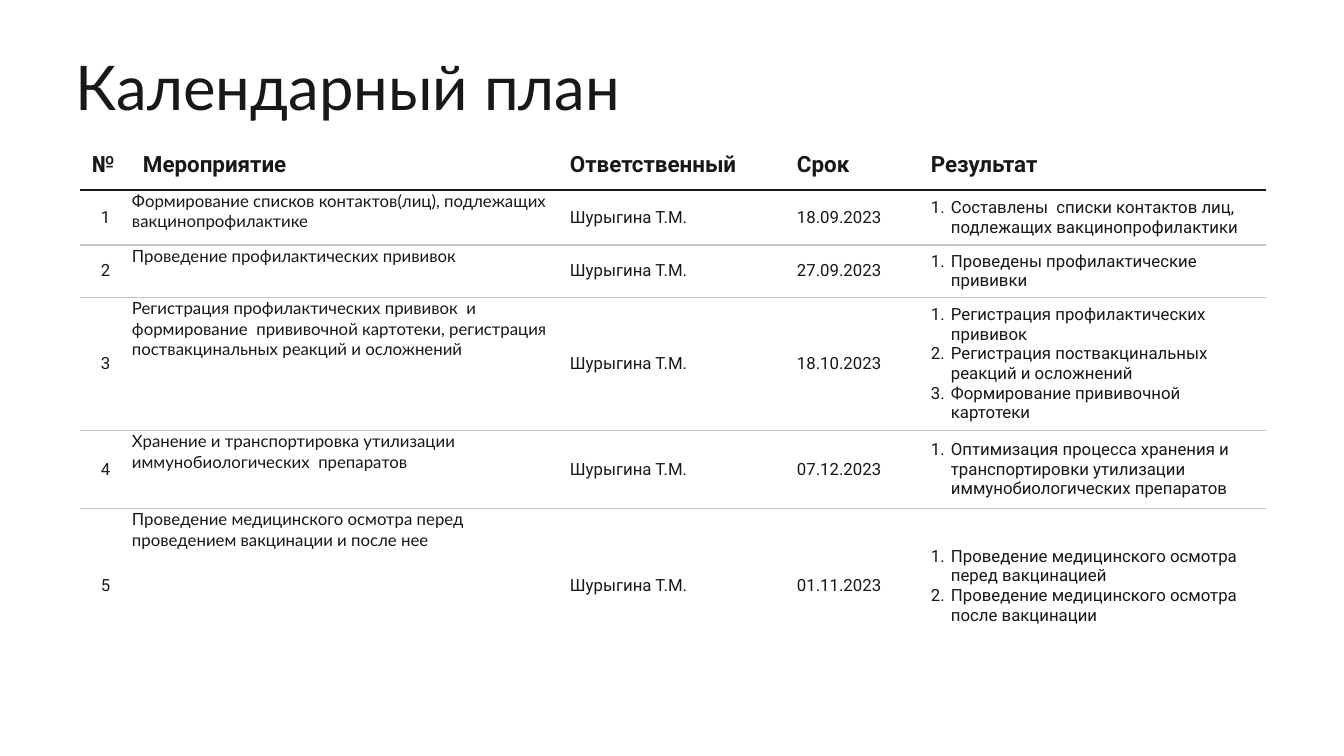
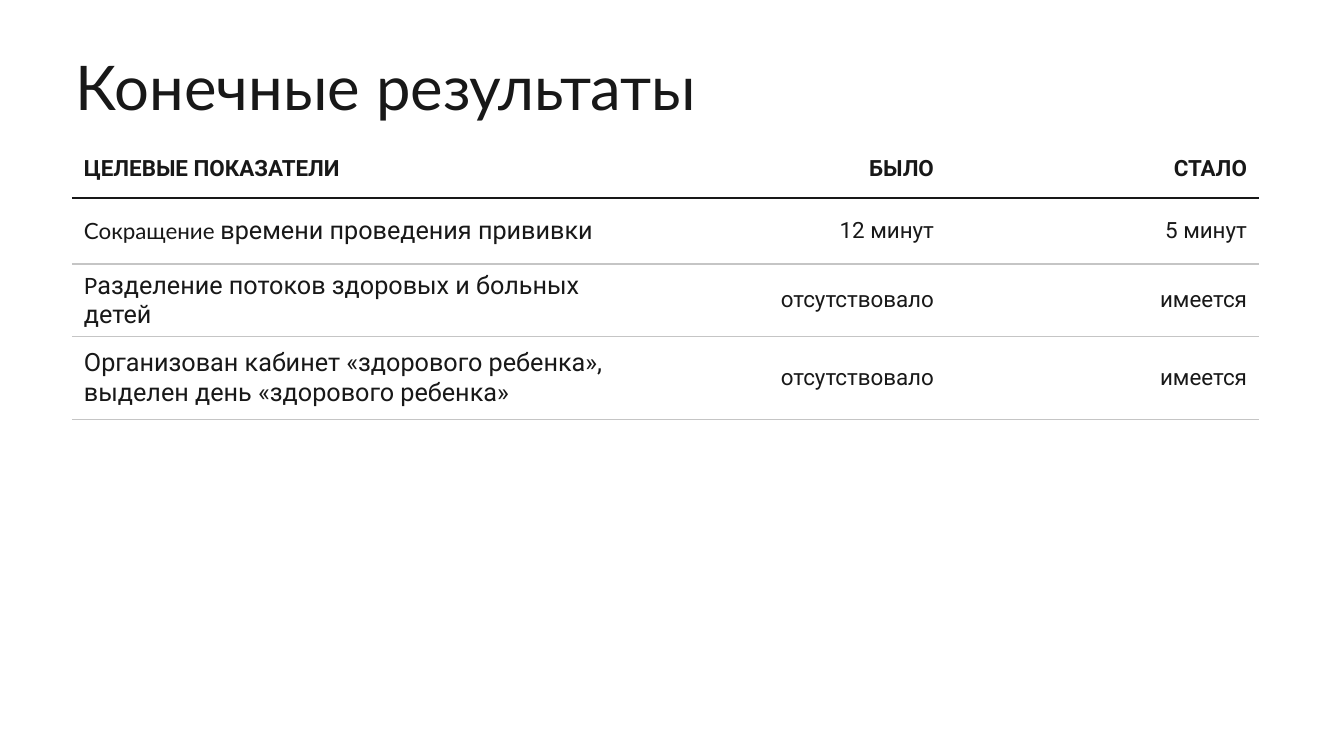
import pptx
import pptx.dml.color
import pptx.enum.text
import pptx.oxml
import pptx.oxml.ns
import pptx.util

PX = 914400 / 100.8
INK = "181818"
RULE = "C5C5C5"
HEADING_FONT = "Lato"
BODY_FONT = "Roboto"
LEFT = pptx.enum.text.PP_ALIGN.LEFT
CENTER = pptx.enum.text.PP_ALIGN.CENTER
RIGHT = pptx.enum.text.PP_ALIGN.RIGHT
TITLE_BOX = (66, 52, 1277, 80)
RESPONSIBLE = "Шурыгина Т.М."


def px(length):
    return pptx.util.Emu(round(length * PX))


def color(code):
    return pptx.dml.color.RGBColor.from_string(code)


def apply(target, values):
    for name, value in values.items():
        setattr(target, name, value)


def font(size, name=BODY_FONT, bold=False):
    return {"size": pptx.util.Pt(size), "name": name, "bold": bold}


def margins(left, top, right, bottom):
    sides = {"left": left, "top": top, "right": right, "bottom": bottom}
    return {f"margin_{side}": px(length) for side, length in sides.items()}


CELL = {**margins(12, 6, 12, 6),
        "vertical_anchor": pptx.enum.text.MSO_ANCHOR.MIDDLE}
TIGHT_CELL = {**margins(1, 1, 1, 0),
              "vertical_anchor": pptx.enum.text.MSO_ANCHOR.TOP}
HEADER_FONT = font(16, bold=True)


def column(text_font, align=LEFT, cell=CELL, header_align=LEFT, numbered=False):
    return {"font": text_font, "align": align, "cell": cell,
            "header_align": header_align, "numbered": numbered}


def add_run(paragraph, text, text_font):
    run = paragraph.add_run()
    run.text = text
    apply(run.font, text_font)
    run.font.color.rgb = color(INK)


def number_paragraph(paragraph):
    properties = paragraph._p.get_or_add_pPr()
    indent = px(20)
    properties.set("marL", str(indent))
    properties.set("indent", str(-indent))
    properties.append(pptx.oxml.parse_xml(
        f'<a:buAutoNum {pptx.oxml.ns.nsdecls("a")} type="arabicPeriod"/>'))


def draw_borders(cell, top, bottom):
    borders = {"lnL": None, "lnR": None, "lnT": top, "lnB": bottom}
    properties = cell._tc.get_or_add_tcPr()
    for tag, border in borders.items():
        code, points = border or (None, 0)
        paint = (f'<a:solidFill><a:srgbClr val="{code}"/></a:solidFill>'
                 if border else "<a:noFill/>")
        properties.append(pptx.oxml.parse_xml(
            f'<a:{tag} {pptx.oxml.ns.nsdecls("a")} w="{pptx.util.Pt(points)}">'
            f'{paint}</a:{tag}>'))


def fill_cell(cell, paragraphs, style, is_header):
    apply(cell, CELL if is_header else style["cell"])
    for index, runs in enumerate(paragraphs):
        frame = cell.text_frame
        paragraph = frame.add_paragraph() if index else frame.paragraphs[0]
        paragraph.alignment = style["header_align" if is_header else "align"]
        if style["numbered"] and not is_header:
            number_paragraph(paragraph)
        if isinstance(runs, str):
            runs = [(runs, HEADER_FONT if is_header else style["font"])]
        for text, text_font in runs:
            add_run(paragraph, text, text_font)


def draw_table(slide, left, top, widths, heights, styles, rows):
    table = slide.shapes.add_table(
        len(heights), len(widths), px(left), px(top),
        px(sum(widths)), px(sum(heights))).table
    apply(table, {"first_row": False, "horz_banding": False})
    for table_column, width in zip(table.columns, widths):
        table_column.width = px(width)
    for table_row, height in zip(table.rows, heights):
        table_row.height = px(height)
    rules = [None, (INK, 1.5)] + [(RULE, 1)] * (len(heights) - 2) + [None]
    for row_index, row in enumerate(rows):
        for column_index, content in enumerate(row):
            cell = table.cell(row_index, column_index)
            paragraphs = [content] if isinstance(content, str) else content
            fill_cell(cell, paragraphs, styles[column_index], row_index == 0)
            draw_borders(cell, rules[row_index], rules[row_index + 1])
            cell.fill.background()


def add_titled_slide(deck, title):
    slide = deck.slides.add_slide(deck.slide_layouts[6])
    frame = slide.shapes.add_textbox(*map(px, TITLE_BOX)).text_frame
    frame.word_wrap = True
    paragraph = frame.paragraphs[0]
    paragraph.line_spacing = 0.9
    add_run(paragraph, title, font(44, HEADING_FONT))
    return slide


def plan_slide(deck):
    slide = add_titled_slide(deck, "Календарный план")
    body = font(12)
    styles = [
        column(body, CENTER),
        column(font(12, HEADING_FONT), cell=TIGHT_CELL),
        column(body),
        column(body),
        column(body, numbered=True),
    ]
    events = [
        ("Формирование списков контактов(лиц), подлежащих вакцинопрофилактике",
         "18.09.2023",
         ["Составлены  списки контактов лиц, подлежащих вакцинопрофилактики"]),
        ("Проведение профилактических прививок",
         "27.09.2023",
         ["Проведены профилактические прививки"]),
        ("Регистрация профилактических прививок  и формирование  прививочной "
         "картотеки, регистрация поствакцинальных реакций и осложнений",
         "18.10.2023",
         ["Регистрация профилактических прививок",
          "Регистрация поствакцинальных реакций и осложнений",
          "Формирование прививочной картотеки"]),
        ("Хранение и транспортировка утилизации иммунобиологических  препаратов",
         "07.12.2023",
         ["Оптимизация процесса хранения и транспортировки утилизации "
          "иммунобиологических препаратов"]),
        ("Проведение медицинского осмотра перед проведением вакцинации и после нее",
         "01.11.2023",
         ["Проведение медицинского осмотра перед вакцинацией",
          "Проведение медицинского осмотра после вакцинации"]),
    ]
    rows = [["№", "Мероприятие", "Ответственный", "Срок", "Результат"]]
    for number, (event, deadline, results) in enumerate(events, 1):
        rows.append([str(number), event, RESPONSIBLE, deadline, results])
    draw_table(slide, 80, 139, [51, 427, 227, 134, 347],
               [51, 55, 48, 124, 78, 155], styles, rows)


def results_slide(deck):
    slide = add_titled_slide(deck, "Конечные результаты")
    indicator = font(18)
    lead = font(16, HEADING_FONT)
    value = column(font(16), RIGHT, header_align=RIGHT)
    rows = [
        ["ЦЕЛЕВЫЕ ПОКАЗАТЕЛИ", "БЫЛО", "СТАЛО"],
        [[[("Сокращение ", lead), ("времени проведения прививки", indicator)]],
         "12 минут", "5 минут"],
        [[[("Р", lead), ("азделение потоков здоровых и больных детей", indicator)]],
         "отсутствовало", "имеется"],
        ["Организован кабинет «здорового ребенка», выделен день «здорового ребенка»",
         "отсутствовало", "имеется"],
        [[], [], []],
    ]
    draw_table(slide, 72, 140, [561, 313, 313], [58, 66, 64, 83, 83],
               [column(indicator), value, value], rows)


def main():
    deck = pptx.Presentation()
    apply(deck, {"slide_width": px(1344), "slide_height": px(756)})
    plan_slide(deck)
    results_slide(deck)
    deck.save("out.pptx")


if __name__ == "__main__":
    main()
